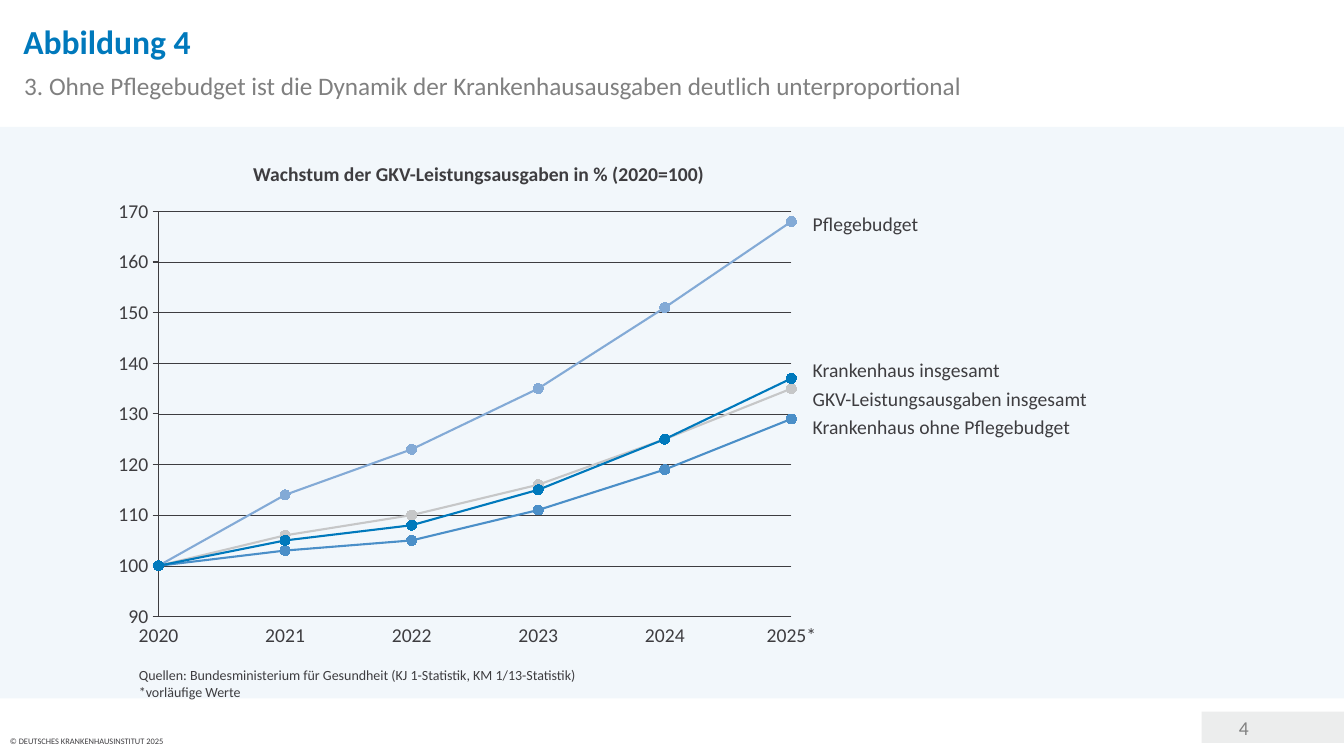
import pptx
import pptx.chart.data
import pptx.dml.color
import pptx.enum.chart
import pptx.enum.shapes
import pptx.enum.text
import pptx.oxml
import pptx.oxml.ns
import pptx.util

RGB = pptx.dml.color.RGBColor
BLUE = RGB(0x00, 0x79, 0xBC)
MID = RGB(0x4B, 0x8F, 0xC8)
PALE = RGB(0x83, 0xAA, 0xD6)
SILVER = RGB(0xC6, 0xC7, 0xC8)
GREY = RGB(0x80, 0x80, 0x80)
DARK = RGB(0x3E, 0x3D, 0x40)
LIGHT = RGB(0xEC, 0xED, 0xED)
FONT = "Calibri"

HEADS = [
    (0, "Abbildung 4", (0.98, 2, 86.27, 6.8), 24, BLUE, True),
    (1, "3. Ohne Pflegebudget ist die Dynamik der Krankenhausausgaben deutlich unterproportional",
     (1.05, 8.13, 88.6, 6.27), 18, GREY, False),
    (3, "Wachstum der GKV-Leistungsausgaben in % (2020=100)",
     (18.08, 20.4, 36.01, 5.2), 14, DARK, True),
]
NOTES = [
    ("4", (91.45, 94, 4.2, 4.53), 14, GREY),
    ("© DEUTSCHES KRANKENHAUSINSTITUT 2025", (0, 96.67, 23.63, 3.2), 6, DARK),
    ("Quellen: Bundesministerium für Gesundheit (KJ 1-Statistik, KM 1/13-Statistik)\n"
     "*vorläufige Werte", (9.6, 87.47, 68.94, 3.07), 10, DARK),
]
YEARS = ["2020", "2021", "2022", "2023", "2024", "2025*"]
SERIES = [
    ("GKV-Leistungsausgaben insgesamt", [100, 106, 110, 116, 125, 135], SILVER, 51.2, 20.48),
    ("Krankenhaus ohne Pflegebudget", [100, 103, 105, 111, 119, 129], MID, 54.93, 19.2),
    ("Pflegebudget", [100, 114, 123, 135, 151, 168], PALE, 28, 7.88),
    ("Krankenhaus insgesamt", [100, 105, 108, 115, 125, 137], BLUE, 47.33, 13.95),
]
CHART = (7.13, 24.93, 52.44, 59.6)
PLOT = {"x": 0.089, "y": 0.051, "w": 0.898, "h": 0.899}
LABEL_X, YEAR_Y, LINE_H = 60.47, 82.4, 3.07

deck = pptx.Presentation()
deck.slide_width = pptx.util.Inches(13.33)
deck.slide_height = pptx.util.Inches(7.5)
slide = deck.slides.add_slide(deck.slide_layouts[4])
ANCHOR = pptx.enum.text.MSO_ANCHOR
ALIGN = pptx.enum.text.PP_ALIGN


def place(box):
    x, y, w, h = box
    wide, high = deck.slide_width / 100, deck.slide_height / 100
    return [int(v) for v in (x * wide, y * high, w * wide, h * high)]


def style(font, size, color, bold=False):
    font.name, font.size, font.bold = FONT, pptx.util.Pt(size), bold
    font.color.rgb = color


def write(frame, text, size, color, bold=False, align=ALIGN.LEFT):
    frame.text = text
    frame.auto_size = pptx.enum.text.MSO_AUTO_SIZE.NONE
    for para in frame.paragraphs:
        para.alignment = align
        para.space_before = pptx.util.Pt(0)
        style(para.font, size, color, bold)


def label(text, box, align=ALIGN.LEFT):
    frame = slide.shapes.add_textbox(*place(box)).text_frame
    frame.margin_left = frame.margin_right = frame.margin_top = frame.margin_bottom = 0
    frame.word_wrap = False
    frame.vertical_anchor = ANCHOR.MIDDLE
    write(frame, text, 14, DARK, align=align)


def panel(box, color, level):
    shape = slide.shapes.add_shape(pptx.enum.shapes.MSO_SHAPE.RECTANGLE, *place(box))
    shape.shadow.inherit = False
    shape.fill.solid()
    shape.fill.fore_color.rgb = color
    shape.line.fill.background()
    slide.shapes._spTree.insert(2 + level, shape._element)
    return shape


def rule(line, width, color=DARK):
    line.color.rgb = color
    line.width = pptx.util.Pt(width)


panel((89.4, 94.13, 10.6, 4.15), LIGHT, 0)
band = panel((0, 16.8, 100, 75.6), MID, 1)
tint = band._element.find(".//" + pptx.oxml.ns.qn("a:srgbClr"))
tint.append(pptx.oxml.parse_xml(
    '<a:alpha %s val="7000"/>' % pptx.oxml.ns.nsdecls("a")))

holders = {p.placeholder_format.idx: p for p in slide.placeholders}
for idx, text, box, size, color, bold in HEADS:
    holder = holders.pop(idx)
    holder.left, holder.top, holder.width, holder.height = place(box)
    holder.text_frame.vertical_anchor = ANCHOR.MIDDLE
    write(holder.text_frame, text, size, color, bold)
for holder in holders.values():
    slide.shapes._spTree.remove(holder._element)

data = pptx.chart.data.CategoryChartData()
data.categories = [str(n + 1) for n in range(len(YEARS))]
for name, vals, *_ in SERIES:
    data.add_series(name, vals)
ENUM = pptx.enum.chart
chart = slide.shapes.add_chart(ENUM.XL_CHART_TYPE.LINE_MARKERS, *place(CHART), data).chart
chart.has_legend = chart.has_title = False
style(chart.font, 10, DARK)
for line, (_, _, color, _, _) in zip(chart.plots[0].series, SERIES):
    line.smooth = False
    rule(line.format.line, 1.5, color)
    line.marker.style = ENUM.XL_MARKER_STYLE.CIRCLE
    line.marker.size = 7
    line.marker.format.fill.solid()
    line.marker.format.fill.fore_color.rgb = color
    line.marker.format.line.color.rgb = color
chart.plots[0].vary_by_categories = False

cats, scale = chart.category_axis, chart.value_axis
cats.tick_label_position = ENUM.XL_TICK_LABEL_POSITION.NONE
cats.major_tick_mark = ENUM.XL_TICK_MARK.NONE
cats.has_major_gridlines = False
scale.major_tick_mark = ENUM.XL_TICK_MARK.OUTSIDE
scale.minimum_scale, scale.maximum_scale, scale.major_unit = 90, 170, 10
scale.has_major_gridlines = True
rule(scale.major_gridlines.format.line, 0.25)
for axis in (cats, scale):
    rule(axis.format.line, 0.75)
style(scale.tick_labels.font, 14, DARK)
scale.tick_labels.number_format = '#,##0;"-"#,##0'
scale.tick_labels.number_format_is_linked = False

qn = pptx.oxml.ns.qn
scale._element.find(qn("c:majorUnit")).addprevious(pptx.oxml.parse_xml(
    '<c:crossBetween %s val="midCat"/>' % pptx.oxml.ns.nsdecls("c")))
area = chart._chartSpace.find(".//" + qn("c:plotArea"))
for old in area.findall(qn("c:layout")):
    area.remove(old)
modes = "".join('<c:%sMode val="edge"/>' % k for k in "xy")
sizes = "".join('<c:%s val="%s"/>' % pair for pair in PLOT.items())
area.insert(0, pptx.oxml.parse_xml(
    '<c:layout %s><c:manualLayout><c:layoutTarget val="inner"/>%s%s</c:manualLayout></c:layout>'
    % (pptx.oxml.ns.nsdecls("c"), modes, sizes)))

for n, year in enumerate(YEARS):
    mid = CHART[0] + CHART[2] * (PLOT["x"] + PLOT["w"] * n / (len(YEARS) - 1))
    wide = 0.77 * len(year)
    label(year, (mid - wide / 2, YEAR_Y, wide, LINE_H), ALIGN.CENTER)
for name, _, _, top, wide in SERIES:
    label(name, (LABEL_X, top, wide, LINE_H))
for text, box, size, color in NOTES:
    frame = slide.shapes.add_textbox(*place(box)).text_frame
    frame.word_wrap = True
    write(frame, text, size, color)

deck.save("out.pptx")
